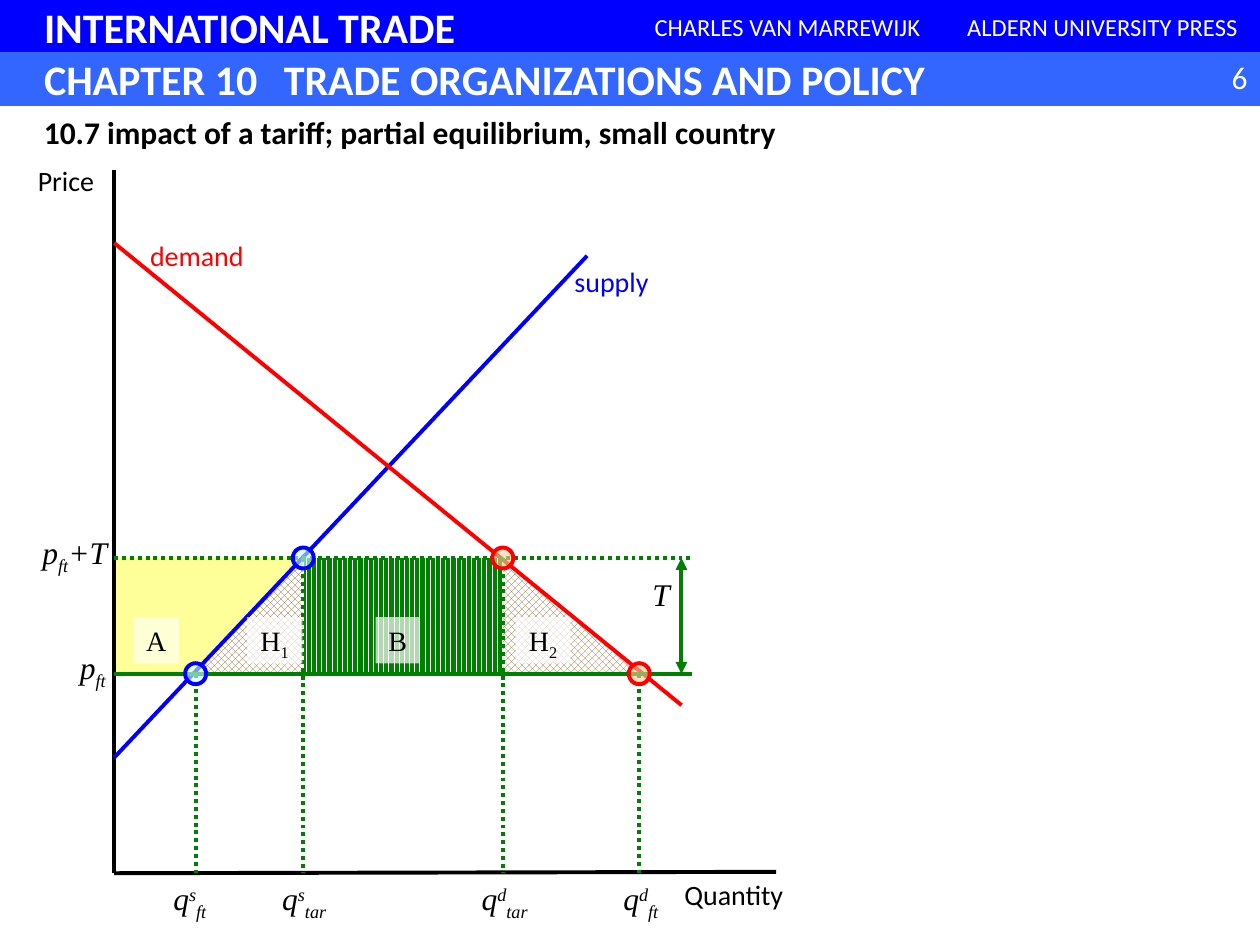
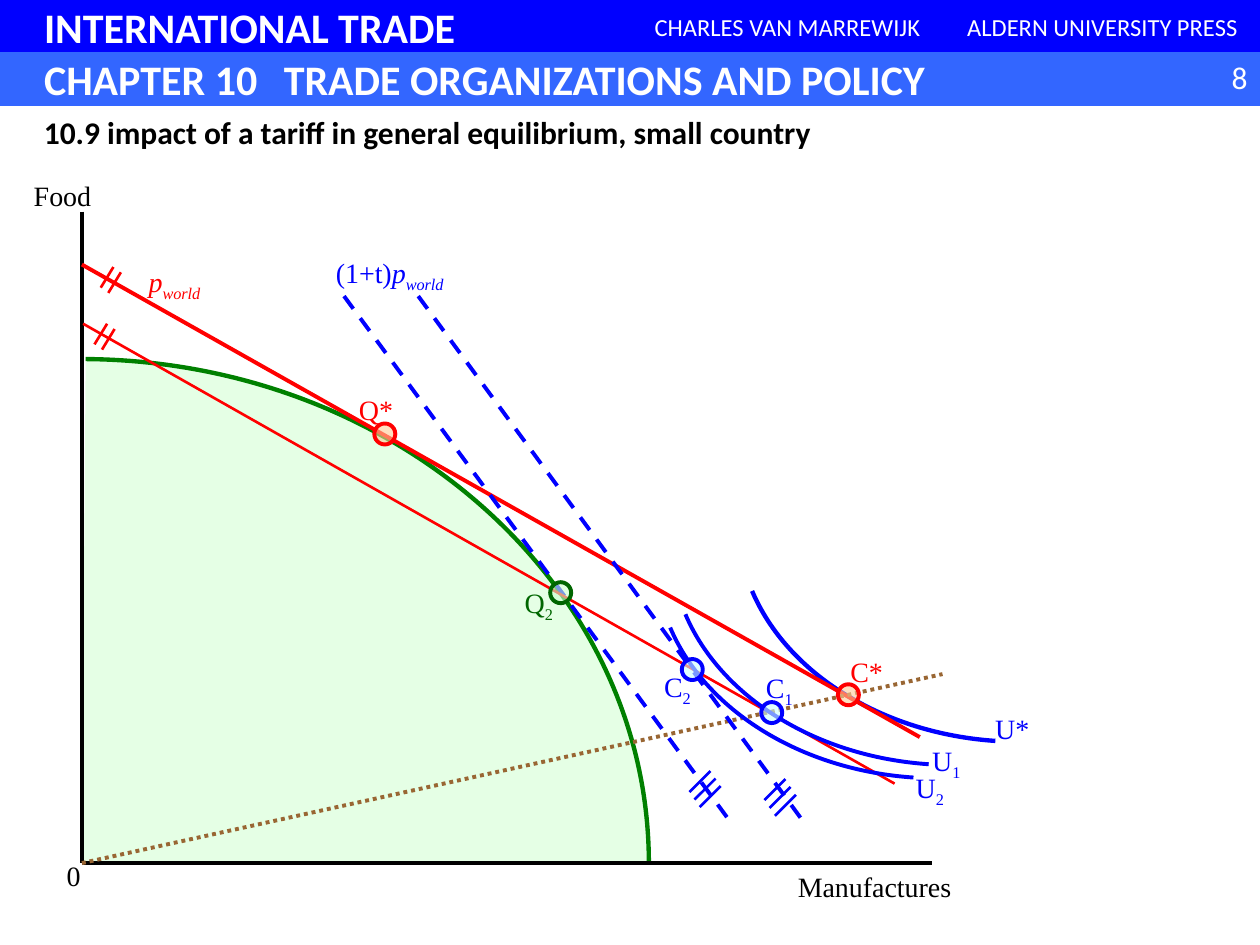
"""Builds two trade-policy slides: a tariff in partial and in general equilibrium."""
import copy

from lxml import etree
from pptx import Presentation
from pptx import util as u
from pptx.dml import color
from pptx.enum import dml, shapes, text
from pptx.oxml import ns

BLUE, BAND, RED, GREEN, DARK_GREEN = "0000FF", "3366FF", "FF0000", "008000", "006600"
BLACK, WHITE, BROWN, YELLOW, MINT = "000000", "FFFFFF", "996633", "FFFF99", "CCFFCC"
PEACH, ICE = "FFCC99", "CCFFFF"
SANS, SERIF = "Calibri", "Times New Roman"
DOT, DASH = dml.MSO_LINE.ROUND_DOT, dml.MSO_LINE.DASH
LEFT, CENTRE, RIGHT = text.PP_ALIGN.LEFT, text.PP_ALIGN.CENTER, text.PP_ALIGN.RIGHT
RECT, OVAL, TRIANGLE = (shapes.MSO_SHAPE.RECTANGLE, shapes.MSO_SHAPE.OVAL,
                        shapes.MSO_SHAPE.RIGHT_TRIANGLE)
GROW = text.MSO_AUTO_SIZE.SHAPE_TO_FIT_TEXT
BASELINE = {"^": "30000", "_": "-25000"}

BANDS = [
    ("INTERNATIONAL TRADE", (0, 0, 720, 30), BLUE, None, 24, True, LEFT),
    ("CHARLES VAN MARREWIJK", (360, 0, 180, 30), BLUE, BLUE, 14, False, CENTRE),
    ("ALDERN UNIVERSITY PRESS", (540, 0.5, 180, 29.5), BLUE, BLUE, 14, False, CENTRE),
    ("CHAPTER 10\tTRADE ORGANIZATIONS AND POLICY", (0, 30, 720, 30), BAND, BAND, 24, True, LEFT),
]
TITLE_INSET, CHAPTER_TAB = 25.2, 137

PRICE_AXIS, QUANTITY_AXIS = 65.3, 499
FREE_PRICE, TARIFF_PRICE, PRICE_END, TARIFF_ARROW = 385, 318.9, 395.3, 389.4
CURVES = {
    "s": {"ends": (65.3, 432.9, 335.5, 146.2), "line": BLUE, "fill": ICE},
    "d": {"ends": (65.3, 138.9, 389.5, 403), "line": RED, "fill": PEACH},
}
QUANTITIES = [
    ("d", "ft", 365.3, FREE_PRICE, 347.2, 38),
    ("s", "ft", 111.8, FREE_PRICE, 90.5, 36),
    ("d", "tar", 287.3, TARIFF_PRICE, 266.4, 44),
    ("s", "tar", 173.3, TARIFF_PRICE, 152.6, 42.5),
]
CURVE_LABELS = [
    ("Price", 12.2, 90, 51, BLACK),
    ("Quantity", 382.3, 498, 74, BLACK),
    ("demand", 76.5, 133, 72, RED),
    ("supply", 319.2, 147.6, 60.5, BLUE),
]
PRICE_LABELS = [
    ([("p", "i"), ("ft", "i_"), ("+T", "i")], 16.4, 301, 52.6),
    ([("p", "i"), ("ft", "i_")], 37.6, 367, 31),
    ([("T", "i")], 365.2, 325, 25.2),
]
AREA_TAGS = [
    ([("A", "")], 76.3, 26, 60),
    ([("B", "")], 214.6, 25.2, 70),
    ([("H", ""), ("2", "_")], 294.5, 31.7, 70),
    ([("H", ""), ("1", "_")], 141.1, 31.7, 70),
]

ORIGIN = (46.8, 493.2)
FRONTIER = [(49, 205.2), (226.8, 206.6), (370.8, 334.8), (370.8, 493.2)]
INDIFFERENCE = [(139, 85.7), (74.9, 81.4), (20.2, 47.5), (0, 0)]
BEST_UTILITY = (429.8, 337.7, 2.5)
LOWER_UTILITIES = [(391.7, 351, 2.25), (383, 358.6, 2.25)]
TRADE_LINES = [
    ((46.8, 121, *ORIGIN), BLACK, 2, None),
    ((*ORIGIN, 532.8, 493.2), BLACK, 2, None),
    ((46.8, 151.2, 525.6, 421.2), RED, 2.25, None),
    ((196.6, 169.2, 418.3, 470.9), BLUE, 2.25, DASH),
    ((47.5, 185, 511.2, 447.8), RED, 1.5, None),
    ((*ORIGIN, 538.6, 385.2), BROWN, 2.25, DOT),
]
SHIFTED_PRICE = ((239, 169.2, 460.1, 470.9), BLUE, 2.25, DASH)
PARALLEL_MARKS = [
    ((61.2, 185), (-7.2, 11.8), (4.3, 3), 2, RED),
    ((64.8, 152.6), (-7.2, 11.8), (4.3, 3), 2, RED),
    ((406, 440.6), (-12, 12), (2.9, 4.3), 3, BLUE),
    ((448.8, 445.2), (-12, 12), (3, 4.5), 3, BLUE),
]
EQUILIBRIA = [
    (219.9, 248, RED, PEACH),
    (484.8, 397, RED, PEACH),
    (320.4, 338.7, DARK_GREEN, MINT),
    (395.6, 382.6, BLUE, ICE),
    (441, 407.2, BLUE, ICE),
]
TRADE_LABELS = [
    ([("0", "")], 31, 487.3, 30, BLACK),
    ([("Manufactures", "")], 448.8, 493.2, 126, BLACK),
    ([("Food", "")], 12.2, 98.6, 60, BLACK),
    ([("U*", "")], 561.6, 403.2, 48, BLUE),
    ([("U", ""), ("1", "_")], 525.6, 421.2, 42, BLUE),
    ([("U", ""), ("2", "_")], 516.2, 437, 42, BLUE),
    ([("C*", "")], 478.8, 370.6, 48, RED),
    ([("C", ""), ("1", "_")], 430.6, 379.4, 42, BLUE),
    ([("C", ""), ("2", "_")], 372.4, 379.2, 42, BLUE),
    ([("Q*", "")], 198, 220.5, 48, RED),
    ([("Q", ""), ("2", "_")], 292.8, 331.2, 42, DARK_GREEN),
    ([("p", "i"), ("world", "i_")], 77.8, 147.4, 66, RED),
    ([("(1+t)", ""), ("p", "i"), ("world", "i_")], 184.8, 142.6, 84, BLUE),
]


def rgb(value):
    return color.RGBColor.from_string(value)


def assign(target, values):
    for attribute, value in values.items():
        setattr(target, attribute, value)


def paint(part, fill=None, opacity=100, edge=None, width=2.25):
    part.shadow.inherit = False
    if fill:
        part.fill.solid()
        part.fill.fore_color.rgb = rgb(fill)
        if opacity < 100:
            tint = part._element.spPr.find(".//" + ns.qn("a:srgbClr"))
            etree.SubElement(tint, ns.qn("a:alpha"), val=str(opacity * 1000))
    else:
        part.fill.background()
    if edge:
        part.line.color.rgb = rgb(edge)
        part.line.width = u.Pt(width)
    else:
        part.line.fill.background()
    return part


def block(slide, frame, kind=RECT, **look):
    return paint(slide.shapes.add_shape(kind, *map(u.Pt, frame)), **look)


def hatch(area, pattern, ink):
    area.fill.patterned()
    area.fill.pattern = pattern
    area.fill.fore_color.rgb = rgb(ink)
    area.fill.back_color.rgb = rgb(WHITE)


def write(holder, pieces, size, font=SERIF, ink=BLACK, bold=False, align=LEFT, **frame_values):
    if isinstance(pieces, str):
        pieces = [(pieces, "")]
    assign(holder.text_frame, {"word_wrap": True, **frame_values})
    paragraph = holder.text_frame.paragraphs[0]
    paragraph.alignment = align
    for words, style in pieces:
        run = paragraph.add_run()
        run.text = words
        assign(run.font, {"size": u.Pt(size), "name": font, "bold": bold, "italic": "i" in style})
        run.font.color.rgb = rgb(ink)
        for mark in set(style) & set(BASELINE):
            run._r.get_or_add_rPr().set("baseline", BASELINE[mark])
    return paragraph


def label(slide, pieces, left, top, width, size=16, **style):
    height = 26.6 if size == 16 else 29
    holder = slide.shapes.add_textbox(*map(u.Pt, (left, top, width, height)))
    write(holder, pieces, size, auto_size=GROW, **style)


def stroke(slide, ends, ink, width=2.25, dash=None, arrows=False):
    line = slide.shapes.add_connector(shapes.MSO_CONNECTOR.STRAIGHT, *map(u.Pt, ends))
    line.line.color.rgb = rgb(ink)
    assign(line.line, {"width": u.Pt(width), "dash_style": dash})
    if arrows:
        for end in ("a:headEnd", "a:tailEnd"):
            etree.SubElement(line.line._get_or_add_ln(), ns.qn(end), type="triangle")
    etree.SubElement(line._element.spPr, ns.qn("a:effectLst"))


def marker(slide, x, y, edge, fill, size=12):
    block(slide, (x - size / 2, y - size / 2, size, size), OVAL, fill=fill, opacity=60, edge=edge)


def bend(slide, controls, corner_point=None, **look):
    start, *rest = [tuple(map(u.Pt, point)) for point in controls]
    builder = slide.shapes.build_freeform(*start)
    builder.add_line_segments(rest, close=False)
    if corner_point:
        builder.add_line_segments([tuple(map(u.Pt, corner_point))], close=True)
    curve = paint(builder.convert_to_shape(), **look)
    trace = curve._element.spPr.find(".//" + ns.qn("a:path"))
    sides = trace.findall(ns.qn("a:lnTo"))[:3]
    cubic = etree.Element(ns.qn("a:cubicBezTo"))
    sides[0].addprevious(cubic)
    for side in sides:
        cubic.append(side[0])
        trace.remove(side)
    if corner_point:
        area = copy.deepcopy(trace)
        area.set("stroke", "0")
        trace.addnext(area)
        for closing in trace[2:]:
            trace.remove(closing)
    trace.set("fill", "none")


def new_slide(deck, number, title):
    slide = deck.slides.add_slide(deck.slide_layouts[6])
    for words, frame, fill, edge, size, bold, align in BANDS:
        inset = TITLE_INSET if align == LEFT else 0
        band = block(slide, frame, fill=fill, edge=edge, width=0.75)
        line = write(band, words, size, SANS, WHITE, bold, align,
                     vertical_anchor=text.MSO_ANCHOR.MIDDLE, margin_left=u.Pt(inset),
                     margin_right=0, margin_top=0, margin_bottom=0)
        if "\t" in words:
            stops = etree.SubElement(line._p.get_or_add_pPr(), ns.qn("a:tabLst"))
            etree.SubElement(stops, ns.qn("a:tab"), pos=str(u.Pt(CHAPTER_TAB)), algn="l")
    label(slide, number, 672, 29.5, 48, 18, font=SANS, ink=WHITE, align=RIGHT)
    label(slide, title, 18, 61.2, 510, 18, font=SANS, bold=True)
    return slide


def corner(slide, left, right, rotation=0):
    width, height = right - left, FREE_PRICE - TARIFF_PRICE
    middle_x, middle_y = left + width / 2, TARIFF_PRICE + height / 2
    if rotation:
        width, height = height, width
    frame = (middle_x - width / 2, middle_y - height / 2, width, height)
    area = block(slide, frame, TRIANGLE, fill=YELLOW)
    area.rotation = rotation
    return area


def draw_partial(slide):
    demand_free, supply_free, demand_tariff, supply_tariff = [q[2] for q in QUANTITIES]
    depth = FREE_PRICE - TARIFF_PRICE
    block(slide, (PRICE_AXIS, TARIFF_PRICE, supply_free - PRICE_AXIS + 1, depth), fill=YELLOW)
    corner(slide, supply_free, supply_tariff, 90)
    for loss in (corner(slide, supply_free, supply_tariff, 270),
                 corner(slide, demand_tariff, demand_free)):
        hatch(loss, dml.MSO_PATTERN.SOLID_DIAMOND, BROWN)
    revenue = block(slide, (supply_tariff, TARIFF_PRICE, demand_tariff - supply_tariff, depth))
    hatch(revenue, dml.MSO_PATTERN.DARK_VERTICAL, GREEN)

    stroke(slide, (PRICE_AXIS, 97.2, PRICE_AXIS, QUANTITY_AXIS), BLACK)
    stroke(slide, (PRICE_AXIS, QUANTITY_AXIS, 443.5, 498.2), BLACK)
    for curve in CURVES.values():
        stroke(slide, curve["ends"], curve["line"])
    for price, dash in ((TARIFF_PRICE, DOT), (FREE_PRICE, None)):
        stroke(slide, (PRICE_AXIS, price, PRICE_END, price), GREEN, dash=dash)
    for curve, regime, x, price, left, width in QUANTITIES:
        stroke(slide, (x, price, x, QUANTITY_AXIS), GREEN, dash=DOT)
        marker(slide, x, price, CURVES[curve]["line"], CURVES[curve]["fill"])
        label(slide, [("q", "i"), (curve, "i^"), (regime, "i_")], left, QUANTITY_AXIS, width, 18,
              align=CENTRE, word_wrap=False)
    stroke(slide, (TARIFF_ARROW, FREE_PRICE, TARIFF_ARROW, TARIFF_PRICE), GREEN, arrows=True)
    for words, left, top, width, ink in CURVE_LABELS:
        label(slide, words, left, top, width, font=SANS, ink=ink, align=CENTRE, word_wrap=False)
    for pieces, left, top, width in PRICE_LABELS:
        label(slide, pieces, left, top, width, 18, align=CENTRE, word_wrap=False)
    for pieces, left, width, opacity in AREA_TAGS:
        tag = block(slide, (left, 352.6, width, 26.6), fill=WHITE, opacity=opacity)
        write(tag, pieces, 16, align=CENTRE, word_wrap=False, auto_size=GROW,
              vertical_anchor=text.MSO_ANCHOR.TOP)


def draw_utility(slide, left, top, width):
    bend(slide, [(left + x, top + y) for x, y in INDIFFERENCE], edge=BLUE, width=width)


def draw_general(slide):
    bend(slide, FRONTIER, ORIGIN, fill=MINT, opacity=50, edge=GREEN, width=2.5)
    draw_utility(slide, *BEST_UTILITY)
    for line in TRADE_LINES:
        stroke(slide, *line)
    for utility in LOWER_UTILITIES:
        draw_utility(slide, *utility)
    stroke(slide, *SHIFTED_PRICE)
    for (x, y), (run, rise), (step_x, step_y), count, ink in PARALLEL_MARKS:
        for index in range(count):
            left, top = x + index * step_x, y + index * step_y
            stroke(slide, (left, top, left + run, top + rise), ink, 1.5)
    for equilibrium in EQUILIBRIA:
        marker(slide, *equilibrium)
    for pieces, left, top, width, ink in TRADE_LABELS:
        label(slide, pieces, left, top, width, ink=ink)


deck = Presentation()
assign(deck, {"slide_width": u.Pt(720), "slide_height": u.Pt(540)})
draw_partial(new_slide(deck, "6", "10.7 impact of a tariff; partial equilibrium, small country"))
draw_general(new_slide(deck, "8", "10.9 impact of a tariff in general equilibrium, small country"))
deck.save("out.pptx")
